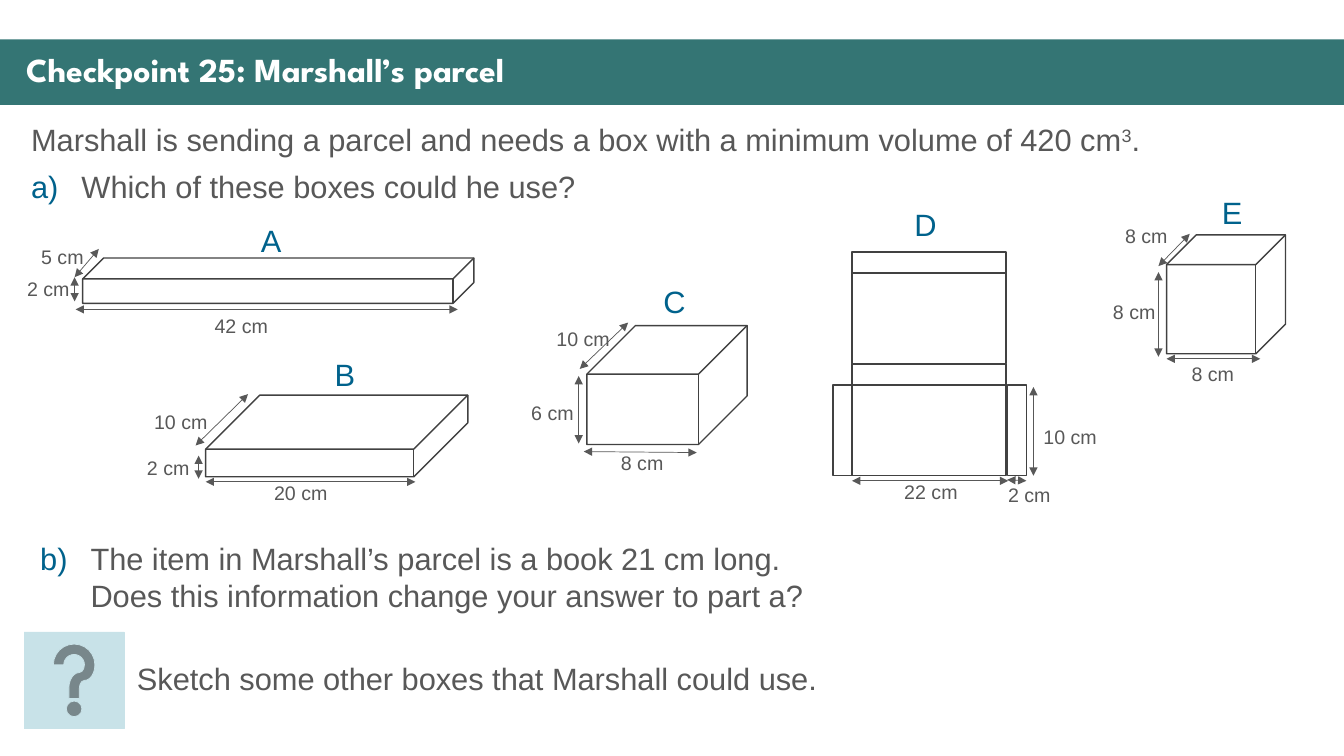
"""Build the slide about the volume of Marshall's parcel."""
from lxml import etree
from pptx import Presentation
from pptx.dml.color import RGBColor
from pptx.enum.shapes import MSO_CONNECTOR, MSO_SHAPE
from pptx.enum.text import MSO_ANCHOR, MSO_AUTO_SIZE
from pptx.oxml.ns import qn
from pptx.util import Inches, Pt

TEAL = RGBColor(0x34, 0x75, 0x74)
PALE_BLUE = RGBColor(0xC8, 0xE2, 0xE8)
BLUE = RGBColor(0x00, 0x62, 0x8C)
GREY = RGBColor(0x58, 0x58, 0x58)
DARK = RGBColor(0x41, 0x41, 0x41)
WHITE = RGBColor(0xFF, 0xFF, 0xFF)

RECTANGLE = MSO_SHAPE.RECTANGLE
CUBE = MSO_SHAPE.CUBE
HELP = MSO_SHAPE.ACTION_BUTTON_HELP
STRAIGHT = MSO_CONNECTOR.STRAIGHT
TOP = MSO_ANCHOR.TOP
MIDDLE = MSO_ANCHOR.MIDDLE
FIT_SHAPE = MSO_AUTO_SIZE.SHAPE_TO_FIT_TEXT

# Each dimension: text, label corner, arrow start, arrow end.
CUBOIDS = [
    ("A", (2.49, 2.15), (0.82, 2.56, 3.88, 0.45), 0.461, [
        ("42 cm", (2.03, 3.07), (0.75, 3.07), (4.54, 3.07)),
        ("2 cm", (0.17, 2.7), (0.74, 2.99), (0.74, 2.75)),
        ("5 cm", (0.31, 2.38), (0.74, 2.75), (0.98, 2.47))]),
    ("B", (3.22, 3.48), (2.04, 3.92, 2.6, 0.81), 0.662, [
        ("20 cm", (2.62, 4.72), (2.04, 4.78), (4.12, 4.78)),
        ("2 cm", (1.36, 4.47), (1.97, 4.75), (1.97, 4.52)),
        ("10 cm", (1.43, 4.02), (1.94, 4.42), (2.46, 3.91))]),
    ("C", (6.48, 2.76), (5.82, 3.23, 1.59, 1.18), 0.409, [
        ("8 cm", (6.06, 4.42), (5.79, 4.48), (6.91, 4.49)),
        ("6 cm", (5.17, 3.93), (5.74, 4.4), (5.74, 3.73)),
        ("10 cm", (5.42, 3.19), (5.75, 3.66), (6.23, 3.2))]),
    ("E", (12.02, 1.87), (11.57, 2.33, 1.18, 1.18), 0.25, [
        ("8 cm", (11.72, 3.54), (11.57, 3.56), (12.5, 3.56)),
        ("8 cm", (10.94, 2.93), (11.49, 3.54), (11.49, 2.7)),
        ("8 cm", (11.06, 2.17), (11.49, 2.64), (11.8, 2.32))]),
]
NET_DIMENSIONS = [
    ("22 cm", (8.87, 4.71), (10, 4.77), (8.45, 4.77)),
    ("2 cm", (9.9, 4.74), (10.18, 4.77), (9.99, 4.76)),
    ("10 cm", (10.25, 4.17), (10.25, 3.84), (10.25, 4.72)),
]


def add_figure(shapes, kind, place, fill=None, line=None, width=1):
    """Add a preset shape with an optional fill and outline."""
    figure = shapes.add_shape(kind, *map(Inches, place))
    figure.shadow.inherit = False
    if fill is None:
        figure.fill.background()
    else:
        figure.fill.solid()
        figure.fill.fore_color.rgb = fill
    if line is None:
        figure.line.fill.background()
    else:
        figure.line.color.rgb = line
        figure.line.width = Pt(width)
    return figure


def add_box(shapes, place, anchor=TOP, wrap=True, grow=True):
    """Add an empty text box and return its text frame."""
    frame = shapes.add_textbox(*map(Inches, place)).text_frame
    frame.word_wrap = wrap
    frame.vertical_anchor = anchor
    if grow:
        frame.auto_size = FIT_SHAPE
    return frame


def style(para, size=22, color=GREY, name="Arial", bold=False):
    """Set the font of a whole paragraph."""
    para.font.size = Pt(size)
    para.font.name = name
    para.font.bold = bold
    para.font.color.rgb = color


def add_letter(para, start):
    """Number a paragraph with a blue letter and a hanging indent."""
    properties = para._p.get_or_add_pPr()
    properties.set("marL", str(Inches(0.5)))
    properties.set("indent", str(-Inches(0.5)))
    color = etree.SubElement(properties, qn("a:buClr"))
    etree.SubElement(color, qn("a:srgbClr"), val=str(BLUE))
    etree.SubElement(properties, qn("a:buFont"), typeface="Arial")
    etree.SubElement(properties, qn("a:buAutoNum"), type="alphaLcParenR", startAt=str(start))


def add_label(shapes, text, corner, size, color):
    """Add a short label that does not wrap."""
    width, height = (0.41, 0.47) if size == 22 else (0.23 + 0.1 * len(text), 0.34)
    frame = add_box(shapes, (*corner, width, height), wrap=False)
    frame.text = text
    style(frame.paragraphs[0], size, color)


def add_dimension(shapes, text, corner, start, end):
    """Add a double-headed arrow and the length it measures."""
    arrow = shapes.add_connector(STRAIGHT, *map(Inches, (*start, *end)))
    arrow.line.color.rgb = GREY
    arrow.line.width = Pt(0.5)
    outline = arrow.line._get_or_add_ln()
    for tip in ("a:headEnd", "a:tailEnd"):
        etree.SubElement(outline, qn(tip), type="triangle")
    etree.SubElement(arrow._element.spPr, qn("a:effectLst"))
    add_label(shapes, text, corner, 14, GREY)


def add_parcel(page, letter, corner, outlines, dimensions):
    """Group a lettered box with its outlines and dimensions."""
    shapes = page.shapes.add_group_shape().shapes
    for kind, place, depth in outlines:
        figure = add_figure(shapes, kind, place, line=DARK)
        if depth is not None:
            figure.adjustments[0] = depth
    add_label(shapes, letter, corner, 22, BLUE)
    for dimension in dimensions:
        add_dimension(shapes, *dimension)


def add_net(page):
    """Add box D, unfolded into a column of panels and two side flaps."""
    panels, top = [], 2.5
    for height in (0.21, 0.9, 0.21, 0.9):
        panels.append((RECTANGLE, (8.45, top, 1.53, height), None))
        top += height
    for left in (8.26, 9.99):
        panels.append((RECTANGLE, (left, 3.82, 0.19, 0.9), None))
    add_parcel(page, "D", (8.97, 1.99), panels, NET_DIMENSIONS)


def add_heading(page):
    """Add the title band and its text."""
    add_figure(page.shapes, RECTANGLE, (0, 0.39, 13.33, 0.65), fill=TEAL)
    frame = add_box(page.shapes, (0.16, 0.48, 13.04, 0.47), MIDDLE, grow=False)
    frame.text = "Checkpoint 25: Marshall’s parcel"
    frame.paragraphs[0].line_spacing = 0.9
    style(frame.paragraphs[0], 24, WHITE, "League Spartan", True)


def add_questions(page):
    """Add the introduction, both questions and the extension task."""
    frame = add_box(page.shapes, (0.21, 1.19, 12.81, 1.24), grow=False)
    intro, part_a = frame.paragraphs[0], frame.add_paragraph()
    for text in ("Marshall is sending a parcel and needs a box "
                 "with a minimum volume of 420 cm", "3", "."):
        span = intro.add_run()
        span.text = text
        if text == "3":
            span._r.get_or_add_rPr().set("baseline", "30000")
    part_a.text = "Which of these boxes could he use?"
    part_a.space_before = Pt(10)
    add_letter(part_a, 1)
    for para in (intro, part_a):
        para.line_spacing = 0.9
        style(para)

    frame = add_box(page.shapes, (0.3, 5.31, 8.16, 0.84))
    frame.text = ("The item in Marshall’s parcel is a book 21 cm long. "
                  "Does this information change your answer to part a?")
    add_letter(frame.paragraphs[0], 2)
    style(frame.paragraphs[0])

    add_figure(page.shapes, HELP, (0.24, 6.27, 0.99, 0.96), PALE_BLUE, PALE_BLUE, 0.5)
    frame = add_box(page.shapes, (1.26, 6.5, 8.68, 0.47))
    frame.text = "Sketch some other boxes that Marshall could use."
    style(frame.paragraphs[0])


def main():
    """Build and save the deck."""
    deck = Presentation()
    deck.slide_width, deck.slide_height = Inches(13.33), Inches(7.5)
    page = deck.slides.add_slide(deck.slide_layouts[6])
    add_heading(page)
    add_questions(page)
    for letter, corner, place, depth, dimensions in CUBOIDS:
        add_parcel(page, letter, corner, [(CUBE, place, depth)], dimensions)
    add_net(page)
    deck.save("out.pptx")


if __name__ == "__main__":
    main()
